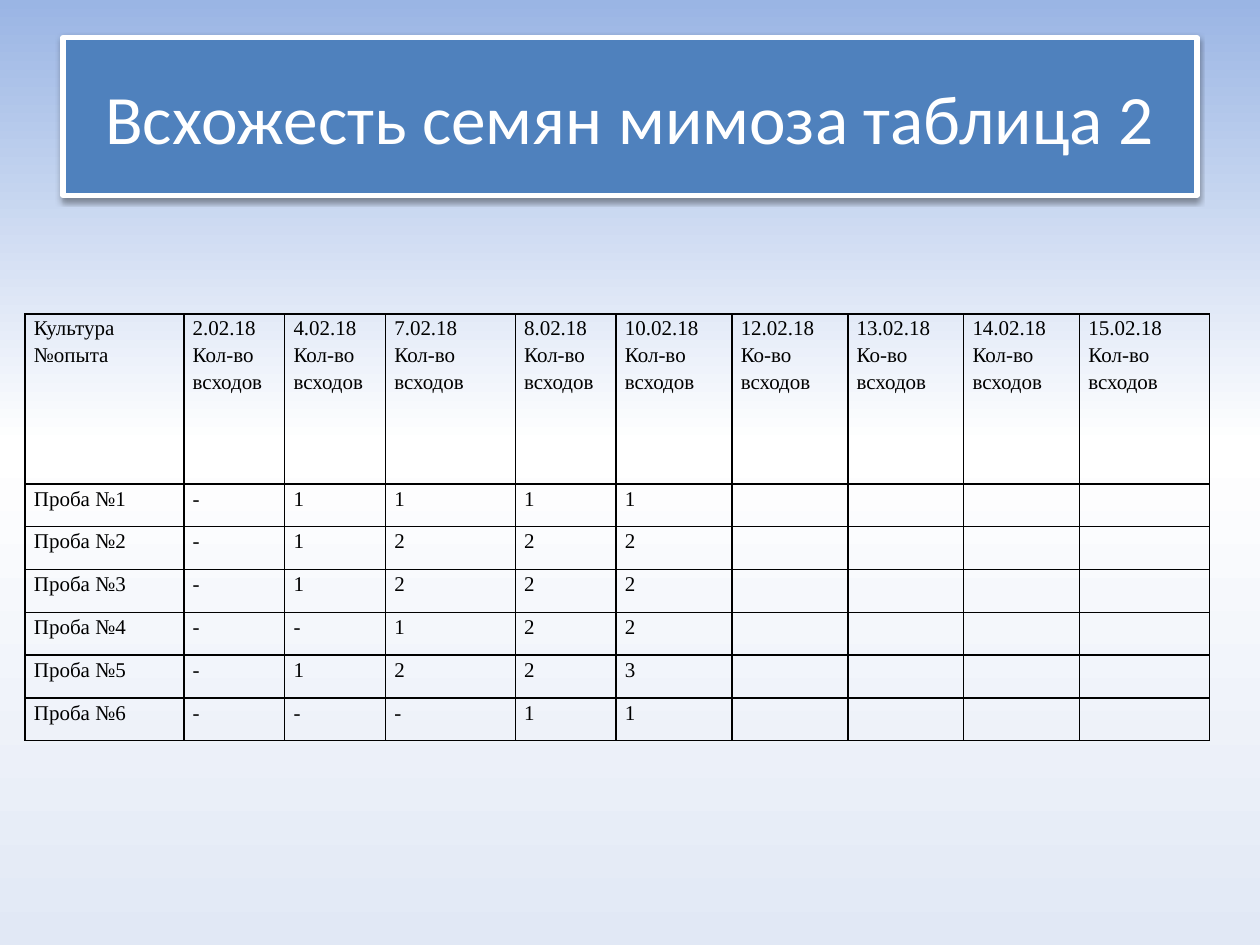
from dataclasses import dataclass

import pptx
import pptx.dml.color
import pptx.enum.text
import pptx.oxml
import pptx.oxml.ns
import pptx.util

Inches, Pt = pptx.util.Inches, pptx.util.Pt
ALIGN = pptx.enum.text.PP_ALIGN
ANCHOR = pptx.enum.text.MSO_ANCHOR
NS = pptx.oxml.ns.nsdecls("a")


@dataclass(frozen=True)
class Theme:
    title_fill: str = "4F81BD"
    white: str = "FFFFFF"
    ink: str = "000000"
    title_font: str = "Calibri"
    table_font: str = "Times New Roman"
    title_size: float = 39.6
    table_size: float = 12
    # position in percent, colour, opacity in percent
    sky: tuple = ((0, "9AB5E4", 100), (47, "FFFFFF", 89), (100, "E1E8F5", 100))


@dataclass(frozen=True)
class Box:
    """A frame given as shares of the slide's width and height."""
    left: float
    top: float
    width: float
    height: float

    def emu(self, prs) -> list[int]:
        w, h = prs.slide_width, prs.slide_height
        return [round(v * side) for v, side in
                zip((self.left, self.top, self.width, self.height), (w, h, w, h))]


@dataclass(frozen=True)
class Sample:
    name: str
    counts: str


THEME = Theme()
TITLE_BOX = Box(0.05, 0.04, 0.9, 1 / 6)
TABLE_BOX = Box(0.02, 0.332, 0.94, 0.452)
COLUMN_WIDTHS = (1.26, 0.8, 0.8, 1.03, 0.8, 0.92, 0.92, 0.92, 0.92, 1.03)
HEADER_HEIGHT, ROW_HEIGHT = 1.35, 0.34
DAYS = (2, 4, 7, 8, 10, 12, 13, 14, 15)
SHORT_LABEL_DAYS = (12, 13)
SAMPLES = [Sample(f"Проба №{i}", counts) for i, counts in enumerate(
    ("-1111", "-1222", "-1222", "--122", "-1223", "---11"), start=1)]


def rgb(value: str):
    return pptx.dml.color.RGBColor.from_string(value)


def set_attrs(obj, values: dict) -> None:
    for name, value in values.items():
        setattr(obj, name, value)


def add_run(p, text: str, font: str, size: float, color: str) -> None:
    r = p.add_run()
    r.text = text
    set_attrs(r.font, {"name": font, "size": Pt(size)})
    r.font.color.rgb = rgb(color)


def paint_background(s) -> None:
    fill = s.background.fill
    fill.gradient()
    fill.gradient_angle = 270
    stops = s.element.find(".//" + pptx.oxml.ns.qn("a:gsLst"))
    for stop in list(stops):
        stops.remove(stop)
    for pos, color, alpha in THEME.sky:
        stops.append(pptx.oxml.parse_xml(
            f'<a:gs {NS} pos="{pos * 1000}"><a:srgbClr val="{color}">'
            f'<a:alpha val="{alpha * 1000}"/></a:srgbClr></a:gs>'))


def add_title(prs, s, text: str) -> None:
    sp = s.shapes.title
    set_attrs(sp, dict(zip(("left", "top", "width", "height"), TITLE_BOX.emu(prs))))
    sp.fill.solid()
    sp.fill.fore_color.rgb = rgb(THEME.title_fill)
    sp.line.color.rgb = rgb(THEME.white)
    sp.line.width = Pt(3)
    sp.element.spPr.append(pptx.oxml.parse_xml(
        f'<a:effectLst {NS}><a:outerShdw blurRad="{Pt(3.1)}" dist="{Pt(1.6)}" '
        f'dir="5400000" rotWithShape="0"><a:srgbClr val="{THEME.ink}">'
        '<a:alpha val="38000"/></a:srgbClr></a:outerShdw></a:effectLst>'))
    tf = sp.text_frame
    set_attrs(tf, {"word_wrap": True, "vertical_anchor": ANCHOR.MIDDLE})
    p = tf.paragraphs[0]
    p.alignment = ALIGN.CENTER
    add_run(p, text, THEME.title_font, THEME.title_size, THEME.white)


def format_cell(cell) -> None:
    """Thin black border on every side, narrow margins and no fill."""
    set_attrs(cell, {"margin_left": Inches(0.07), "margin_right": Inches(0.07),
                     "margin_top": 0, "margin_bottom": 0})
    tc_pr = cell._tc.get_or_add_tcPr()
    for side in ("lnL", "lnR", "lnT", "lnB"):
        tc_pr.append(pptx.oxml.parse_xml(
            f'<a:{side} {NS} w="{Pt(1)}"><a:solidFill>'
            f'<a:srgbClr val="{THEME.ink}"/></a:solidFill></a:{side}>'))
    cell.fill.background()


def fill_cell(cell, lines: list[str]) -> None:
    format_cell(cell)
    tf = cell.text_frame
    for i, line in enumerate(lines):
        p = tf.add_paragraph() if i else tf.paragraphs[0]
        set_attrs(p, {"alignment": ALIGN.JUSTIFY, "line_spacing": 1.15})
        add_run(p, line, THEME.table_font, THEME.table_size, THEME.ink)


def table_rows() -> list[list[list[str]]]:
    header = [["Культура", "№опыта"]]
    for day in DAYS:
        label = "Ко-во" if day in SHORT_LABEL_DAYS else "Кол-во"
        header.append([f"{day}.02.18", label, "всходов"])
    body = [[[sample.name]] + [[c] for c in sample.counts]
            + [[]] * (len(DAYS) - len(sample.counts)) for sample in SAMPLES]
    return [header] + body


def add_germination_table(prs, s) -> None:
    rows = table_rows()
    table = s.shapes.add_table(len(rows), len(COLUMN_WIDTHS), *TABLE_BOX.emu(prs)).table
    set_attrs(table, {"first_row": False, "horz_banding": False})
    for column, width in zip(table.columns, COLUMN_WIDTHS):
        column.width = Inches(width)
    for i, (row, content) in enumerate(zip(table.rows, rows)):
        row.height = Inches(ROW_HEIGHT if i else HEADER_HEIGHT)
        for cell, lines in zip(row.cells, content):
            fill_cell(cell, lines)


def main() -> None:
    prs = pptx.Presentation()
    set_attrs(prs, {"slide_width": Inches(10), "slide_height": Inches(7.5)})
    s = prs.slides.add_slide(prs.slide_layouts[5])
    paint_background(s)
    add_title(prs, s, "Всхожесть семян мимоза таблица 2")
    add_germination_table(prs, s)
    prs.save("out.pptx")


if __name__ == "__main__":
    main()
